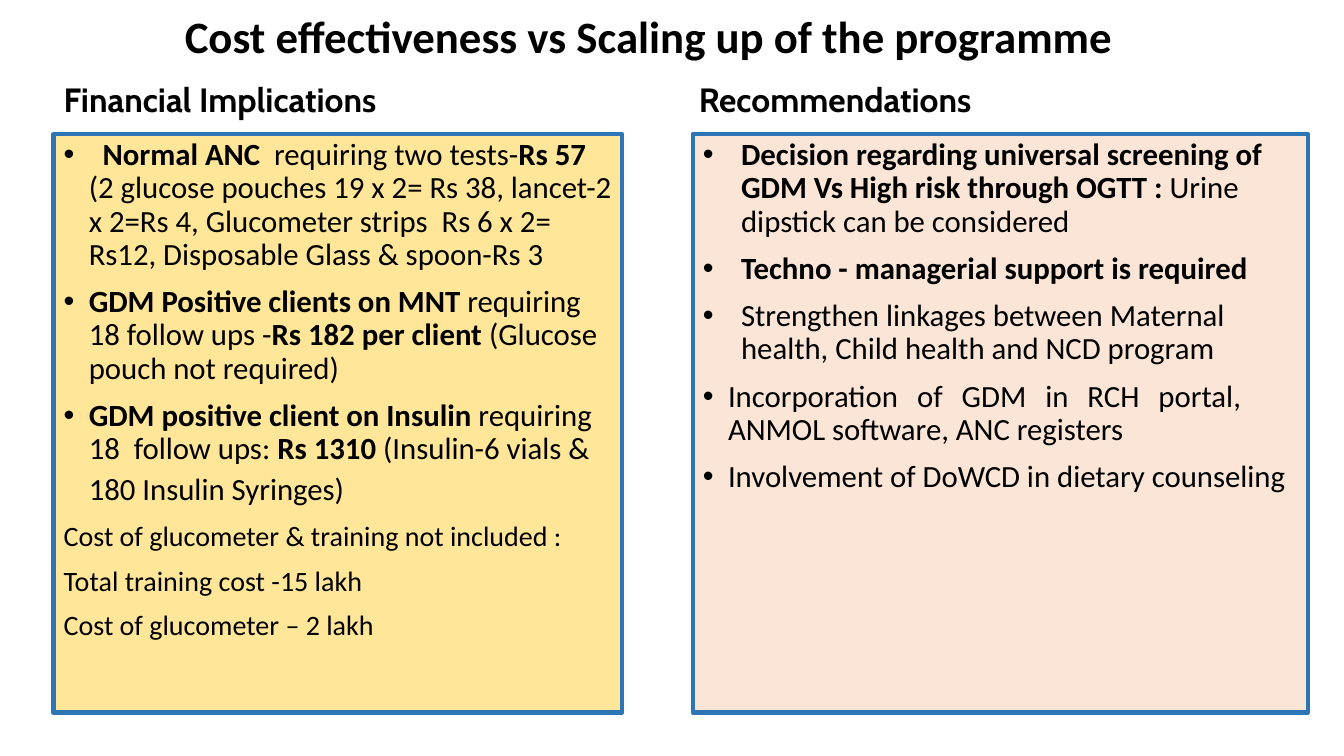
from lxml import etree
from pptx import Presentation
from pptx.dml.color import RGBColor
from pptx.enum.text import MSO_ANCHOR, MSO_AUTO_SIZE, PP_ALIGN
from pptx.oxml.ns import qn
from pptx.util import Inches, Pt

LEFT, CENTER, JUSTIFY = PP_ALIGN.LEFT, PP_ALIGN.CENTER, PP_ALIGN.JUSTIFY
TOP, MIDDLE, BOTTOM = MSO_ANCHOR.TOP, MSO_ANCHOR.MIDDLE, MSO_ANCHOR.BOTTOM
NO_FIT = MSO_AUTO_SIZE.NONE

COLORS = {
    "text": "000000",
    "border": "2E75B6",
    "costs": "FFE699",
    "advice": "FBE5D6",
}
SLIDE_W, SLIDE_H = Inches(13.33), Inches(7.5)
COMPARISON = 4
HEAD_TOP, HEAD_H = 9.73, 6.8
PANEL_TOP, PANEL_H = 17.73, 76.53

COSTS = [
    [("  ", False), ("Normal ANC", True), ("  requiring two tests-", False),
     ("Rs 57  ", True),
     ("(2 glucose pouches 19 x 2= Rs 38, lancet-2 x 2=Rs 4, Glucometer strips  Rs 6 "
      "x 2= Rs12, Disposable Glass & spoon-Rs 3", False)],
    [("GDM Positive clients on MNT", True), (" requiring 18 follow ups -", False),
     ("Rs 182 per client ", True), ("(Glucose pouch not required)", False)],
    [("GDM positive client on Insulin ", True), ("requiring 18  follow ups: ", False),
     ("Rs 1310", True), (" (Insulin-6 vials & 180 Insulin Syringes)", False)],
]
COST_NOTES = [
    "Cost of glucometer & training not included :",
    "Total training cost -15 lakh",
    "Cost of glucometer – 2 lakh",
]
ADVICE = [
    [("Decision regarding universal screening of GDM Vs High risk through OGTT : ", True),
     ("Urine dipstick can be considered", False)],
    [("Techno - managerial support is required", True)],
    [("Strengthen linkages between Maternal health, Child health and NCD program", False)],
]
SYSTEMS = [
    ("Incorporation of GDM in RCH portal, ANMOL software, ANC registers", 0.56),
    ("Involvement of DoWCD in dietary counseling", 0),
]


def rgb(name):
    return RGBColor.from_string(COLORS[name])


def place(sp, left, top, width, height, anchor):
    sp.left, sp.width = (int(SLIDE_W * share / 100) for share in (left, width))
    sp.top, sp.height = (int(SLIDE_H * share / 100) for share in (top, height))
    tf = sp.text_frame
    tf.word_wrap = True
    tf.auto_size = NO_FIT
    tf.vertical_anchor = anchor
    return tf


def add_run(p, text, size, bold=False, font="Calibri"):
    r = p.add_run()
    r.text = text
    r.font.size = Pt(size)
    r.font.bold = bold
    r.font.name = font
    r.font.color.rgb = rgb("text")


def add_paragraph(tf, indent=0, align=LEFT, before=10, right=0):
    first = tf.paragraphs[0]
    p = tf.add_paragraph() if first.runs else first
    p.alignment = align
    p.line_spacing = 0.9
    p.space_before = Pt(before)
    p.space_after = Pt(0)
    pPr = p._p.get_or_add_pPr()
    pPr.set("marL", str(Inches(indent)))
    pPr.set("indent", str(-Inches(indent)))
    pPr.set("marR", str(Inches(right)))
    if indent:
        etree.SubElement(pPr, qn("a:buFont"), typeface="Arial")
        etree.SubElement(pPr, qn("a:buChar"), char="•")
    else:
        etree.SubElement(pPr, qn("a:buNone"))
    return p


def add_heading(sp, text, left, width):
    tf = place(sp, left, HEAD_TOP, width, HEAD_H, BOTTOM)
    add_run(add_paragraph(tf), text, 24, True, "Cabin")


def add_panel(sp, fill, left, width):
    sp.fill.solid()
    sp.fill.fore_color.rgb = rgb(fill)
    sp.line.color.rgb = rgb("border")
    sp.line.width = Pt(3)
    return place(sp, left, PANEL_TOP, width, PANEL_H, TOP)


def add_bullets(tf, items, indent):
    for runs in items:
        p = add_paragraph(tf, indent)
        for text, bold in runs:
            add_run(p, text, 22, bold)
    return p


def main():
    prs = Presentation()
    prs.slide_width, prs.slide_height = SLIDE_W, SLIDE_H
    s = prs.slides.add_slide(prs.slide_layouts[COMPARISON])
    title, costs_head, costs, advice_head, advice = s.placeholders

    tf = place(title, 6.08, 1.73, 84.4, 6.8, MIDDLE)
    p = add_paragraph(tf, align=CENTER, before=0)
    add_run(p, "Cost effectiveness vs Scaling up of the programme", 32, True)

    add_heading(costs_head, "Financial Implications", 3.98, 42.31)
    tf = add_panel(costs, "costs", 3.98, 42.31)
    p = add_bullets(tf, COSTS, 0.25)
    add_run(p, " ", 28)
    for note in COST_NOTES:
        add_run(add_paragraph(tf), note, 20)

    add_heading(advice_head, "Recommendations", 51.24, 42.54)
    tf = add_panel(advice, "advice", 51.54, 45.76)
    add_bullets(tf, ADVICE, 0.38)
    for text, right in SYSTEMS:
        add_run(add_paragraph(tf, 0.25, JUSTIFY, right=right), text, 22)

    prs.save("out.pptx")


if __name__ == "__main__":
    main()
